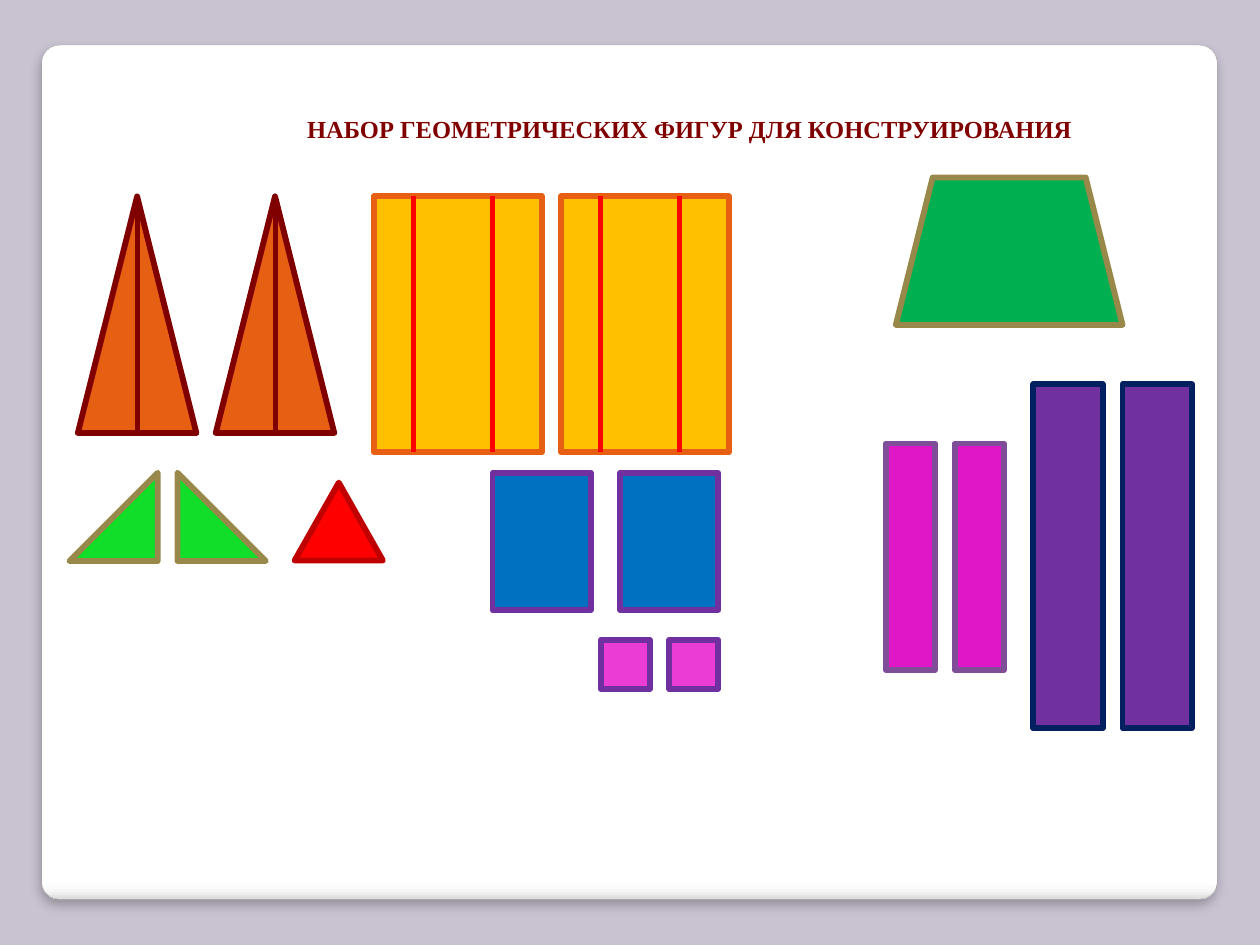
from dataclasses import dataclass

from lxml import etree
from pptx import Presentation
from pptx.dml.color import RGBColor
from pptx.enum.shapes import MSO_CONNECTOR, MSO_SHAPE
from pptx.enum.text import MSO_AUTO_SIZE
from pptx.oxml import parse_xml
from pptx.oxml.ns import nsdecls, qn
from pptx.util import Cm, Pt

RECTANGLE = MSO_SHAPE.RECTANGLE
ROUNDED = MSO_SHAPE.ROUNDED_RECTANGLE
TRIANGLE = MSO_SHAPE.ISOSCELES_TRIANGLE
RIGHT_TRIANGLE = MSO_SHAPE.RIGHT_TRIANGLE
TRAPEZOID = MSO_SHAPE.TRAPEZOID
STRAIGHT = MSO_CONNECTOR.STRAIGHT


@dataclass(frozen=True)
class Theme:
    background: str = "C9C2D1"
    panel_line: str = "A4A4A4"
    panel_stops: tuple = ((0, "FFFFFF"), (98, "FFFFFF"), (99, "F7F7F7"), (100, "DADADA"))
    maroon: str = "800000"
    orange: str = "E75F13"
    yellow: str = "FFC000"
    red: str = "FF0000"
    dark_red: str = "C00000"
    green: str = "00B050"
    lime: str = "10DE29"
    olive: str = "98894B"
    blue: str = "0070C0"
    purple: str = "7030A0"
    navy: str = "002060"
    magenta: str = "DF17C7"
    plum: str = "7E4E99"
    pink: str = "EB3DD6"
    font: str = "Times New Roman"
    title_size: float = 14
    outline: float = 3.35
    fold: float = 3


THEME = Theme()


@dataclass(frozen=True)
class Box:
    """Position and size in centimetres."""
    left: float
    top: float
    width: float
    height: float

    def shifted(self, distance):
        return Box(self.left + distance, self.top, self.width, self.height)

    def lengths(self):
        return Cm(self.left), Cm(self.top), Cm(self.width), Cm(self.height)


def color(value):
    return RGBColor.from_string(value)


def add_panel(slide, box):
    panel = slide.shapes.add_shape(ROUNDED, *box.lengths())
    panel.adjustments[0] = 0.021
    panel.line.color.rgb = color(THEME.panel_line)
    panel.line.width = Pt(0.16)
    panel.fill.gradient()
    panel.fill.gradient_angle = 270
    stops = panel._element.spPr.find(qn("a:gradFill")).find(qn("a:gsLst"))
    for stop in list(stops):
        stops.remove(stop)
    for percent, value in THEME.panel_stops:
        stop = etree.SubElement(stops, qn("a:gs"), pos=str(percent * 1000))
        etree.SubElement(stop, qn("a:srgbClr"), val=value)
    panel._element.spPr.append(parse_xml(
        f'<a:effectLst {nsdecls("a")}>'
        f'<a:outerShdw blurRad="{Pt(6)}" dist="{Pt(4)}" dir="5400000" rotWithShape="0">'
        '<a:srgbClr val="000000"><a:alpha val="25000"/></a:srgbClr>'
        '</a:outerShdw></a:effectLst>'))


def add_figure(slide, kind, box, fill, outline):
    figure = slide.shapes.add_shape(kind, *box.lengths())
    figure.shadow.inherit = False
    figure.fill.solid()
    figure.fill.fore_color.rgb = color(fill)
    figure.line.color.rgb = color(outline)
    figure.line.width = Pt(THEME.outline)
    etree.SubElement(figure.line._get_or_add_ln(), qn("a:round"))
    return figure


def add_fold(slide, box, offset, line_color):
    """Draw a vertical line through the box, offset from its left side."""
    x = Cm(box.left + offset)
    fold = slide.shapes.add_connector(STRAIGHT, x, Cm(box.top), x, Cm(box.top + box.height))
    fold.line.color.rgb = color(line_color)
    fold.line.width = Pt(THEME.fold)
    etree.SubElement(fold._element.spPr, qn("a:effectLst"))


def add_pair(slide, kind, box, pitch, fill, outline, folds=(), fold_color=None):
    """Draw two equal figures side by side, with fold lines at the given offsets."""
    for place in (box, box.shifted(pitch)):
        add_figure(slide, kind, place, fill, outline)
        for offset in folds:
            add_fold(slide, place, offset, fold_color)


def add_mirrored_triangles(slide, box, pitch):
    left = add_figure(slide, RIGHT_TRIANGLE, box, THEME.lime, THEME.olive)
    left.rotation = 270
    add_figure(slide, RIGHT_TRIANGLE, box.shifted(pitch), THEME.lime, THEME.olive)


def add_title(slide, box, text):
    frame = slide.shapes.add_textbox(*box.lengths()).text_frame
    frame.word_wrap = False
    frame.auto_size = MSO_AUTO_SIZE.SHAPE_TO_FIT_TEXT
    paragraph = frame.paragraphs[0]
    paragraph.text = text
    font = paragraph.font
    font.name = THEME.font
    font.size = Pt(THEME.title_size)
    font.bold = True
    font.color.rgb = color(THEME.maroon)


def add_figure_set(slide):
    theme = THEME
    add_pair(slide, TRIANGLE, Box(1.57, 3.96, 2.39, 4.77), 2.78,
             theme.orange, theme.maroon, (1.2,), theme.maroon)
    add_figure(slide, TRAPEZOID, Box(18.06, 3.58, 4.57, 2.97), theme.green, theme.olive)
    add_figure(slide, TRIANGLE, Box(5.94, 9.73, 1.78, 1.57), theme.red, theme.dark_red)
    add_pair(slide, RECTANGLE, Box(20.83, 7.75, 1.4, 6.93), 1.8, theme.purple, theme.navy)
    add_pair(slide, RECTANGLE, Box(7.54, 3.96, 3.38, 5.16), 3.77,
             theme.yellow, theme.orange, (0.8, 2.39), theme.red)
    add_pair(slide, RECTANGLE, Box(17.86, 8.94, 0.99, 4.57), 1.39, theme.magenta, theme.plum)
    add_pair(slide, RECTANGLE, Box(9.93, 9.53, 1.98, 2.77), 2.57, theme.blue, theme.purple)
    add_mirrored_triangles(slide, Box(1.4, 9.53, 1.78, 1.78), 2.18)
    add_pair(slide, RECTANGLE, Box(12.11, 12.9, 0.99, 0.99), 1.38, theme.pink, theme.purple)


def main():
    presentation = Presentation()
    presentation.slide_width = Cm(25.4)
    presentation.slide_height = Cm(19.05)
    slide = presentation.slides.add_slide(presentation.slide_layouts[6])
    slide.background.fill.solid()
    slide.background.fill.fore_color.rgb = color(THEME.background)
    add_panel(slide, Box(0.84, 0.91, 23.7, 17.22))
    add_figure_set(slide)
    add_title(slide, Box(5.94, 2.18, 16.03, 0.86),
              "НАБОР ГЕОМЕТРИЧЕСКИХ ФИГУР ДЛЯ КОНСТРУИРОВАНИЯ")
    presentation.save("out.pptx")


if __name__ == "__main__":
    main()
